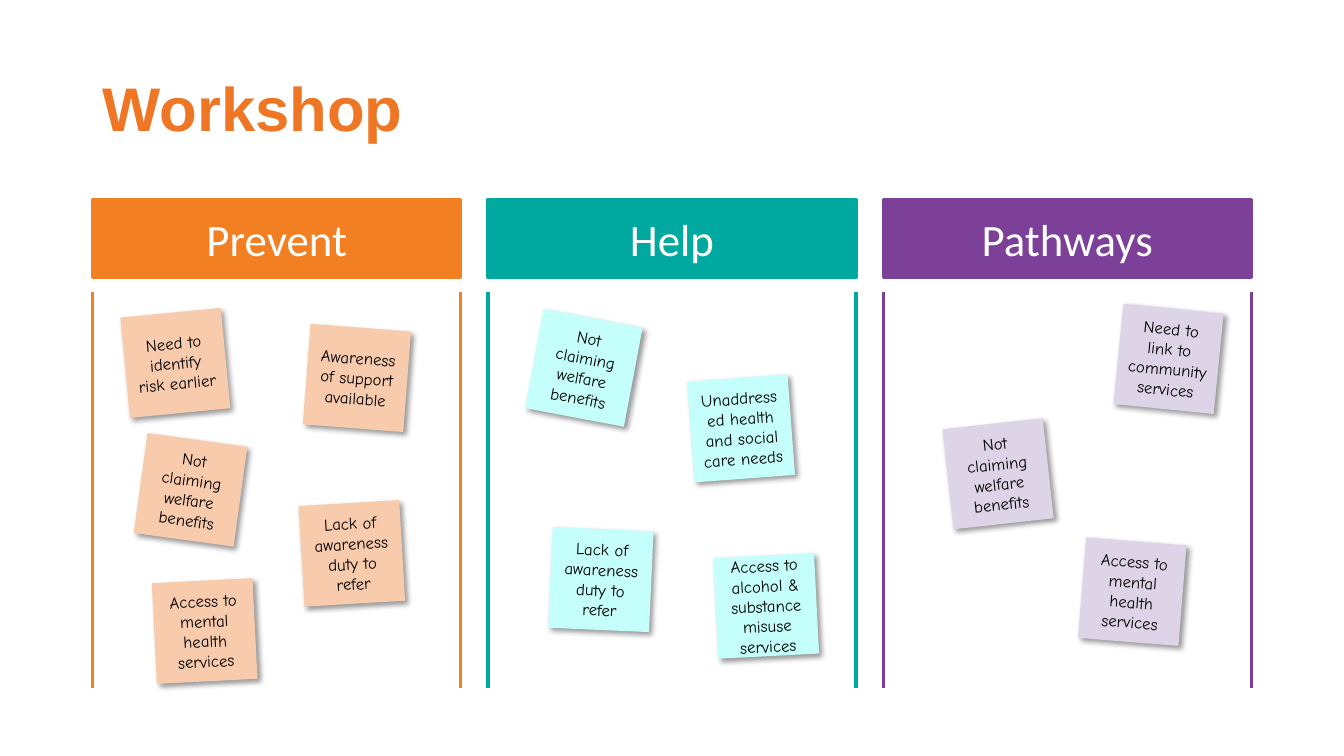
from pptx import Presentation
from pptx.dml.color import RGBColor
from pptx.enum.shapes import MSO_CONNECTOR, MSO_SHAPE
from pptx.enum.text import MSO_ANCHOR, PP_ALIGN
from pptx.oxml import parse_xml
from pptx.oxml.ns import nsdecls, qn
from pptx.util import Inches, Pt

TITLE_ORANGE = RGBColor(0xEE, 0x76, 0x24)
ORANGE = RGBColor(0xF3, 0x7F, 0x23)
TEAL = RGBColor(0x00, 0xA9, 0xA0)
PURPLE = RGBColor(0x7C, 0x40, 0x99)
PEACH = RGBColor(0xF8, 0xCB, 0xAD)
AQUA = RGBColor(0xC5, 0xFF, 0xFC)
LILAC = RGBColor(0xDE, 0xD4, 0xE7)
WHITE = RGBColor(0xFF, 0xFF, 0xFF)
BLACK = RGBColor(0x00, 0x00, 0x00)

TITLE_FONT = {"name": "Arial", "size": Pt(44), "bold": True}
HEADER_FONT = {"name": "Calibri", "size": Pt(32)}
NOTE_FONT = {"name": "Comic Neue", "size": Pt(12)}

LEFT, PITCH, WIDTH = 0.92, 3.92, 3.65
RAIL_TOP, RAIL_BOTTOM = 2.9, 6.83
NOTE_SIZE = 1

COLUMNS = [
    ("Prevent", ORANGE, PEACH, [
        (1.24, 3.1, -5.5, "Need to identify risk earlier"),
        (1.39, 4.36, 7.8, "Not claiming welfare benefits"),
        (3.04, 3.25, 4.4, "Awareness of support available"),
        (2.99, 4.99, -3.4, "Lack of awareness duty to refer"),
        (1.53, 5.76, -2.9, "Access to mental health services"),
    ]),
    ("Help", TEAL, AQUA, [
        (5.29, 3.15, 10.7, "Not claiming welfare benefits"),
        (6.85, 3.75, -4.3, "Unaddressed health and social care needs"),
        (5.46, 5.25, 2.5, "Lack of awareness duty to refer"),
        (7.1, 5.51, -2.9, "Access to alcohol & substance misuse services"),
    ]),
    ("Pathways", PURPLE, LILAC, [
        (11.09, 3.06, 5.7, "Need to link to community services"),
        (9.4, 4.2, -6.3, "Not claiming welfare benefits"),
        (10.73, 5.37, 4.6, "Access to mental health services"),
    ]),
]


def write(sp, text, color, font, align=PP_ALIGN.CENTER):
    """Put one paragraph of formatted text in a shape, anchored in the middle."""
    tf = sp.text_frame
    tf.word_wrap = True
    tf.vertical_anchor = MSO_ANCHOR.MIDDLE
    p = tf.paragraphs[0]
    p.alignment = align
    r = p.add_run()
    r.text = text
    r.font.color.rgb = color
    for name, value in font.items():
        setattr(r.font, name, value)
    return p


def add_title(s, text):
    """Add the slide title."""
    sp = s.shapes.add_textbox(Inches(LEFT), Inches(0.38), Inches(11.5), Inches(1.45))
    write(sp, text, TITLE_ORANGE, TITLE_FONT, PP_ALIGN.LEFT).line_spacing = 0.9


def add_box(s, left, top, width, height, fill):
    """Add a filled rectangle with no shadow."""
    sp = s.shapes.add_shape(MSO_SHAPE.RECTANGLE, Inches(left), Inches(top),
                            Inches(width), Inches(height))
    sp.fill.solid()
    sp.fill.fore_color.rgb = fill
    sp.shadow.inherit = False
    return sp


def add_header(s, left, text, color):
    """Add the coloured heading of a column."""
    sp = add_box(s, left, 1.98, WIDTH, 0.77, color)
    sp.line.color.rgb = color
    sp.line.width = Pt(2.25)
    write(sp, text, WHITE, HEADER_FONT)


def add_rail(s, x, color):
    """Add a vertical line at the side of a column."""
    line = s.shapes.add_connector(MSO_CONNECTOR.STRAIGHT, Inches(x), Inches(RAIL_TOP),
                                  Inches(x), Inches(RAIL_BOTTOM))
    line.line.color.rgb = color
    line.line.width = Pt(2.25)
    line._element.spPr.append(parse_xml(f"<a:effectLst {nsdecls('a')}/>"))


def add_note(s, left, top, angle, text, fill):
    """Add a tilted sticky note with a soft shadow."""
    sp = add_box(s, left, top, NOTE_SIZE, NOTE_SIZE, fill)
    sp.line.fill.background()
    sp.rotation = angle
    sp._element.spPr.find(qn("a:effectLst")).append(parse_xml(
        f'<a:outerShdw {nsdecls("a")} blurRad="{Pt(4)}" dist="{Pt(3)}" dir="2700000" '
        'algn="tl" rotWithShape="0"><a:srgbClr val="000000"><a:alpha val="40000"/>'
        '</a:srgbClr></a:outerShdw>'))
    write(sp, text, BLACK, NOTE_FONT)


def main():
    """Build the workshop board and save it."""
    prs = Presentation()
    prs.slide_width, prs.slide_height = Inches(13.33), Inches(7.5)
    s = prs.slides.add_slide(prs.slide_layouts[6])
    add_title(s, "Workshop")
    for i, (heading, color, note_color, notes) in enumerate(COLUMNS):
        left = LEFT + i * PITCH
        add_header(s, left, heading, color)
        for x in (left, left + WIDTH):
            add_rail(s, x, color)
        for x, y, angle, text in notes:
            add_note(s, x, y, angle, text, note_color)
    prs.save("out.pptx")


if __name__ == "__main__":
    main()
